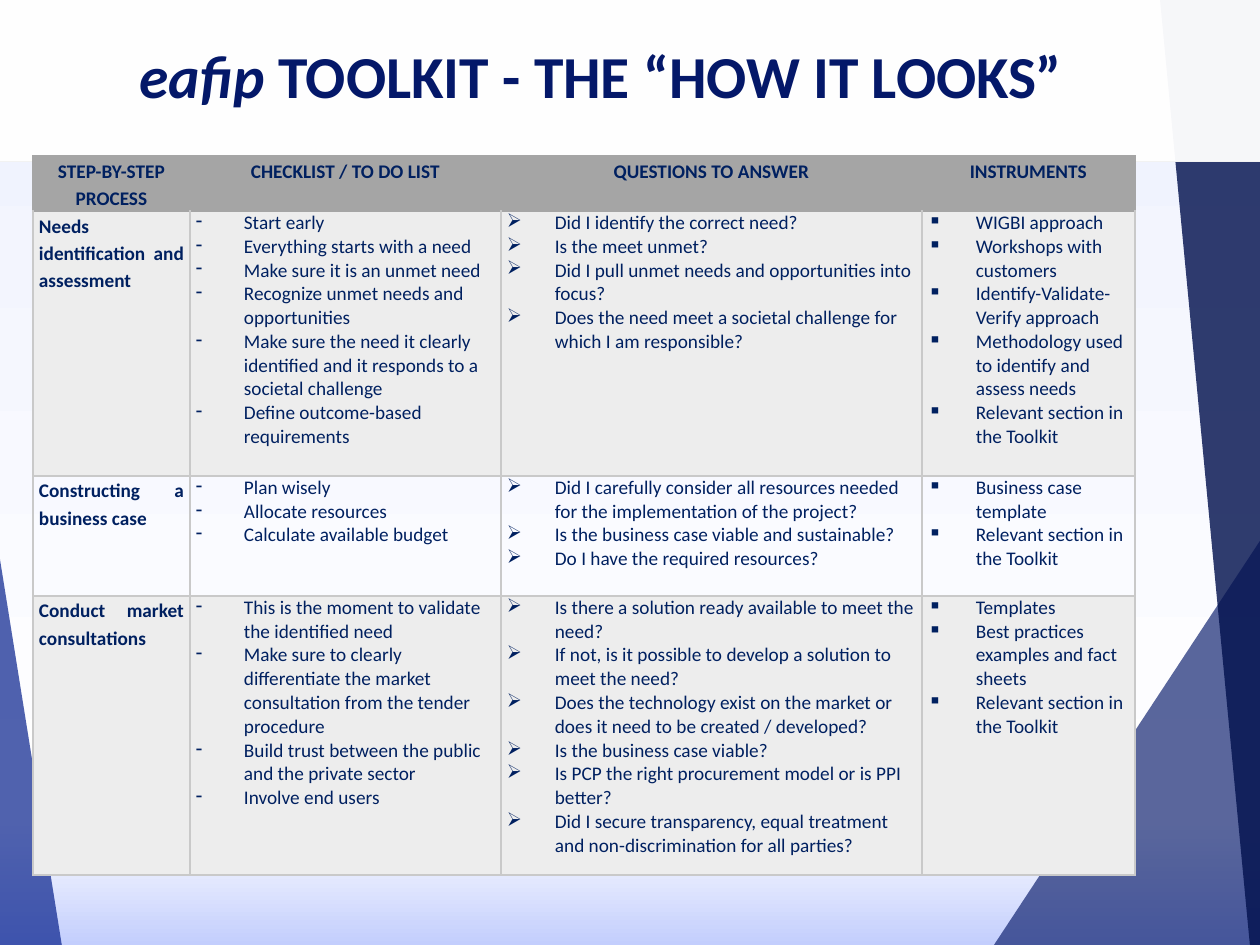
"""Build the toolkit slide: a step-by-step table over a faceted blue background."""
from copy import deepcopy
from dataclasses import dataclass

from pptx import Presentation
from pptx.dml.color import RGBColor
from pptx.enum.shapes import MSO_SHAPE
from pptx.enum.text import MSO_ANCHOR, PP_ALIGN
from pptx.oxml.ns import qn
from pptx.oxml.xmlchemy import OxmlElement
from pptx.util import Emu, Pt

SCALE = 914400 / 126


@dataclass(frozen=True)
class Theme:
    font: str = "Calibri"
    title: str = "041869"
    text: str = "002060"
    header: str = "A5A5A5"
    stripe: str = "EDEDED"
    grid: str = "C9C9C9"
    band: str = "FFFFFF"
    band_line: str = "F2F2F2"
    title_size: int = 34
    table_size: int = 11
    line_width: int = 1
    table_spacing: float = 1.15
    backdrop: tuple = ((0, "EEF1FE"), (0.87, "FFFFFF"), (1, "C3CEFD"))


THEME = Theme()
SLIDE_SIZE = (1260, 945)
BAND_BOX = (-1, -1, 1262, 163)
TITLE_BOX = (19, 33, 1164, 84)
TABLE_ORIGIN = (33, 156)
COLUMN_WIDTHS = (157, 311, 421, 213)
ROW_HEIGHTS = (55, 265, 120, 279)
CELL_INSET = 6
BULLET_INDENT = 48
BULLETS = ("-", "➢", "▪")

TITLE = (("eafip ", True), ("TOOLKIT - THE “HOW IT LOOKS”", False))

FACETS = [
    ("06208C", 70, [(-1, 553), (62, 946), (-1, 945)]),
    ("051869", 66, [(994, 945), (1260, 541), (1261, 945)]),
    ("03124F", 82, [(1160, -1), (1250, 945), (1263, 945), (1262, -1)]),
]

HEADERS = ["STEP-BY-STEP PROCESS", "CHECKLIST / TO DO LIST", "QUESTIONS TO ANSWER", "INSTRUMENTS"]

STEPS = [
    ("Needs identification and assessment",
     ["Start early",
      "Everything starts with a need",
      "Make sure it is an unmet need",
      "Recognize unmet needs and opportunities",
      "Make sure the need it clearly identified and it responds to a societal challenge",
      "Define outcome-based requirements"],
     ["Did I identify the correct need?",
      "Is the meet unmet?",
      "Did I pull unmet needs and opportunities into focus?",
      "Does the need meet a societal challenge for which I am responsible?"],
     ["WIGBI approach",
      "Workshops with customers",
      "Identify-Validate-Verify approach",
      "Methodology used to identify and assess needs",
      "Relevant section in the Toolkit"]),
    ("Constructing a business case",
     ["Plan wisely",
      "Allocate resources",
      "Calculate available budget"],
     ["Did I carefully consider all resources needed for the implementation of the project?",
      "Is the business case viable and sustainable?",
      "Do I have the required resources?"],
     ["Business case template",
      "Relevant section in the Toolkit"]),
    ("Conduct market consultations",
     ["This is the moment to validate the identified need",
      "Make sure to clearly differentiate the market consultation from the tender procedure",
      "Build trust between the public and the private sector",
      "Involve end users"],
     ["Is there a solution ready available to meet the need?",
      "If not, is it possible to develop a solution to meet the need?",
      "Does the technology exist on the market or does it need to be created / developed?",
      "Is the business case viable?",
      "Is PCP the right procurement model or is PPI better?",
      "Did I secure transparency, equal treatment and non-discrimination for all parties?"],
     ["Templates",
      "Best practices examples and fact sheets",
      "Relevant section in the Toolkit"]),
]


def px(length):
    return Emu(round(length * SCALE))


def rgb(color):
    return RGBColor.from_string(color)


def style_run(run, size, color, bold, italic=False):
    font = run.font
    font.name, font.size, font.bold, font.italic = THEME.font, Pt(size), bold, italic
    font.color.rgb = rgb(color)


def fill_translucent(shape, color, opacity):
    shape.shadow.inherit = False
    shape.fill.solid()
    shape.fill.fore_color.rgb = rgb(color)
    alpha = OxmlElement("a:alpha")
    alpha.set("val", str(opacity * 1000))
    shape.fill._xPr.find(".//" + qn("a:srgbClr")).append(alpha)


def paint_backdrop(slide):
    fill = slide.background.fill
    fill.gradient()
    fill.gradient_angle = 270
    stop_list = slide._element.find(".//" + qn("a:gsLst"))
    stop_list.append(deepcopy(stop_list[0]))
    for stop, (position, color) in zip(fill.gradient_stops, THEME.backdrop):
        stop.position = position
        stop.color.rgb = rgb(color)


def add_facets(slide):
    for color, opacity, (start, *corners) in FACETS:
        builder = slide.shapes.build_freeform(*start, scale=SCALE)
        builder.add_line_segments(corners, close=True)
        facet = builder.convert_to_shape()
        fill_translucent(facet, color, opacity)
        facet.line.fill.background()
    band = slide.shapes.add_shape(MSO_SHAPE.RECTANGLE, *map(px, BAND_BOX))
    fill_translucent(band, THEME.band, 96)
    band.line.color.rgb = rgb(THEME.band_line)
    band.line.width = Pt(0.5)


def place_title(slide):
    title = slide.shapes.title
    slide.shapes._spTree.append(title._element)
    title.left, title.top, title.width, title.height = map(px, TITLE_BOX)
    title.text_frame.vertical_anchor = MSO_ANCHOR.TOP
    heading = title.text_frame.paragraphs[0]
    heading.alignment = PP_ALIGN.CENTER
    for words, italic in TITLE:
        run = heading.add_run()
        run.text = words
        style_run(run, THEME.title_size, THEME.title, True, italic)


def add_bullet(paragraph, mark):
    properties = paragraph._p.get_or_add_pPr()
    properties.set("marL", str(px(BULLET_INDENT)))
    properties.set("indent", str(-px(BULLET_INDENT)))
    bullet = OxmlElement("a:buChar")
    bullet.set("char", mark)
    properties.append(bullet)


def draw_borders(cell, top_color, color):
    properties = cell._tc.get_or_add_tcPr()
    for index, side in enumerate(("lnL", "lnR", "lnT", "lnB")):
        line = OxmlElement(f"a:{side}")
        line.set("w", str(Pt(THEME.line_width)))
        fill = OxmlElement("a:solidFill")
        tone = OxmlElement("a:srgbClr")
        tone.set("val", top_color if side == "lnT" else color)
        fill.append(tone)
        line.append(fill)
        properties.insert(index, line)


def fill_cell(cell, lines, fill, alignment=None, mark=None):
    cell.margin_left = cell.margin_right = px(CELL_INSET)
    cell.margin_top = cell.margin_bottom = 0
    cell.text_frame.text = "\n".join(lines)
    for paragraph in cell.text_frame.paragraphs:
        if mark:
            add_bullet(paragraph, mark)
        else:
            paragraph.alignment = alignment
            paragraph.line_spacing = THEME.table_spacing
        style_run(paragraph.runs[0], THEME.table_size, THEME.text, mark is None)
    if fill:
        cell.fill.solid()
        cell.fill.fore_color.rgb = rgb(fill)
    else:
        cell.fill.background()


def add_steps_table(slide):
    size = sum(COLUMN_WIDTHS), sum(ROW_HEIGHTS)
    frame = slide.shapes.add_table(len(ROW_HEIGHTS), len(COLUMN_WIDTHS), *map(px, TABLE_ORIGIN + size))
    table = frame.table
    table.first_row = table.horz_banding = False
    for column, width in zip(table.columns, COLUMN_WIDTHS):
        column.width = px(width)
    for row, height in zip(table.rows, ROW_HEIGHTS):
        row.height = px(height)
    for cell, header in zip(table.rows[0].cells, HEADERS):
        fill_cell(cell, [header], THEME.header, PP_ALIGN.CENTER)
        draw_borders(cell, THEME.header, THEME.header)
    for number, (step, *lists) in enumerate(STEPS, 1):
        fill = THEME.stripe if number % 2 else None
        step_cell, *list_cells = table.rows[number].cells
        fill_cell(step_cell, [step], fill, PP_ALIGN.JUSTIFY)
        for cell, lines, mark in zip(list_cells, lists, BULLETS):
            fill_cell(cell, lines, fill, mark=mark)
        for cell in table.rows[number].cells:
            draw_borders(cell, THEME.header if number == 1 else THEME.grid, THEME.grid)


def main():
    deck = Presentation()
    deck.slide_width, deck.slide_height = map(px, SLIDE_SIZE)
    slide = deck.slides.add_slide(deck.slide_layouts[5])
    paint_backdrop(slide)
    add_facets(slide)
    place_title(slide)
    add_steps_table(slide)
    deck.save("out.pptx")


if __name__ == "__main__":
    main()
